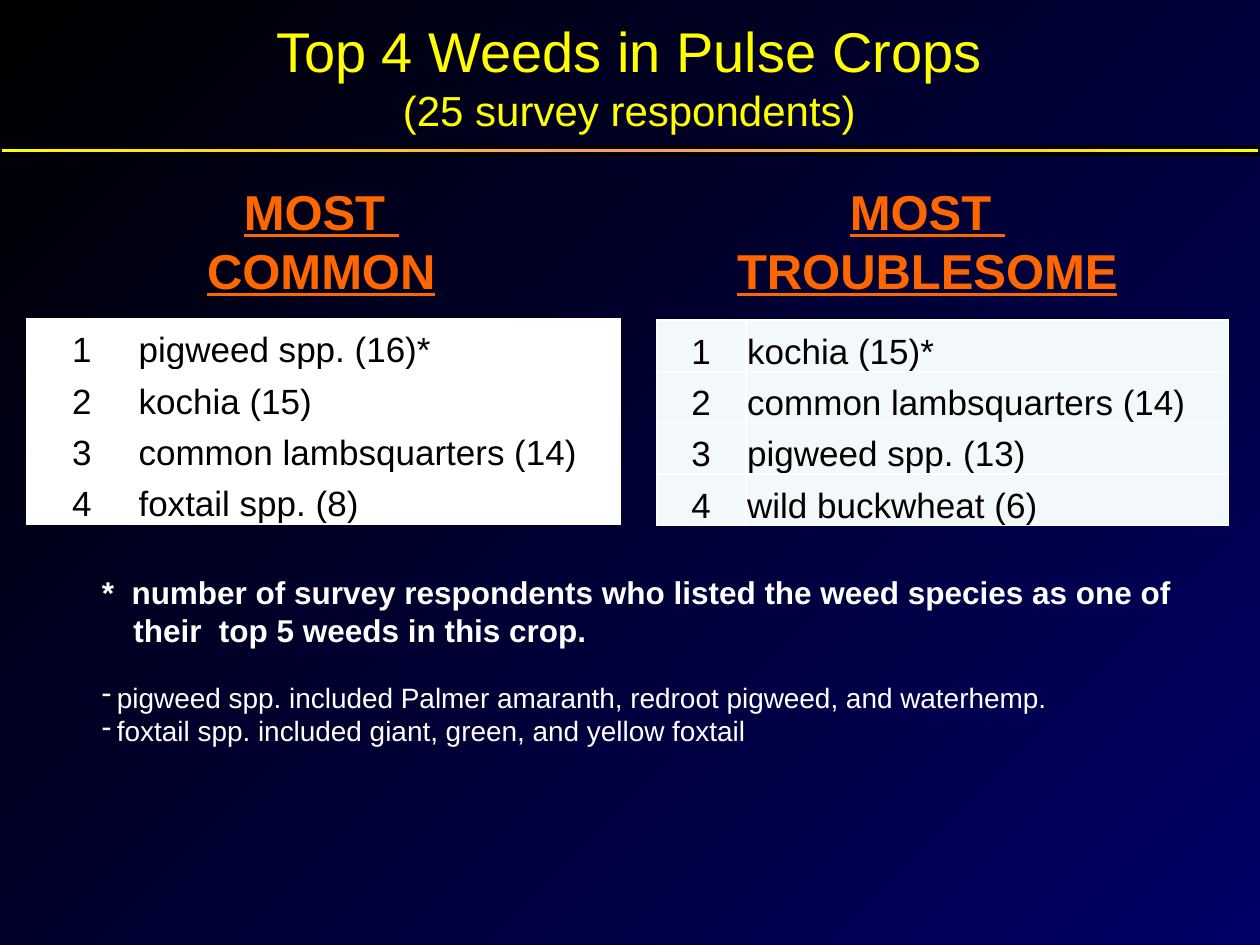
from copy import deepcopy
from dataclasses import dataclass

from lxml import etree
from pptx import Presentation
from pptx.dml.color import RGBColor
from pptx.enum.shapes import MSO_SHAPE
from pptx.enum.text import MSO_ANCHOR, PP_ALIGN
from pptx.oxml.ns import qn
from pptx.util import Inches, Pt

RECT = MSO_SHAPE.RECTANGLE
MIDDLE, BOTTOM, TOP = MSO_ANCHOR.MIDDLE, MSO_ANCHOR.BOTTOM, MSO_ANCHOR.TOP
LEFT, CENTER = PP_ALIGN.LEFT, PP_ALIGN.CENTER

BLACK = RGBColor(0x00, 0x00, 0x00)
NAVY = RGBColor(0x00, 0x00, 0x66)
WHITE = RGBColor(0xFF, 0xFF, 0xFF)
YELLOW = RGBColor(0xFF, 0xFF, 0x00)
PEACH = RGBColor(0xFF, 0x99, 0x66)
ORANGE = RGBColor(0xFF, 0x66, 0x00)
PALE = RGBColor(0xF3, 0xF9, 0xFA)

HEAD = {"size": Pt(28), "bold": True, "underline": True}
ROW_H = 1.63 / 4
NAME_W = 3.83


@dataclass
class Ranking:
    head: str
    head_x: float
    head_w: float
    wrap: bool
    x: float
    y: float
    num_w: float
    fill: RGBColor
    weeds: list[str]


RANKS = [
    Ranking("COMMON", 1.35, 2.4, True, 0.21, 2.53, 0.88, WHITE,
            ["pigweed spp. (16)*", "kochia (15)",
             "common lambsquarters (14)", "foxtail spp. (8)"]),
    Ranking("TROUBLESOME", 5.73, 3.26, False, 5.21, 2.54, 0.71, PALE,
            ["kochia (15)*", "common lambsquarters (14)",
             "pigweed spp. (13)", "wild buckwheat (6)"]),
]


def write(para, text: str, color: RGBColor, look: dict, align=LEFT) -> None:
    para.alignment = align
    run = para.add_run()
    run.text = text
    run.font.color.rgb = color
    for key, value in {"name": "Arial", **look}.items():
        setattr(run.font, key, value)


def add_box(slide, x: float, y: float, w: float, h: float, wrap: bool = True,
            anchor=TOP):
    frame = slide.shapes.add_textbox(
        Inches(x), Inches(y), Inches(w), Inches(h)).text_frame
    frame.word_wrap = wrap
    frame.vertical_anchor = anchor
    return frame


def add_lines(frame, lines: list[tuple[str, dict]], color: RGBColor,
              align=LEFT) -> None:
    """Write one paragraph per line, starting with the frame's first."""
    for i, (text, look) in enumerate(lines):
        para = frame.add_paragraph() if i else frame.paragraphs[0]
        write(para, text, color, look, align)


def hang(para, depth: float, mark: str = "") -> None:
    """Set a hanging indent, with a bullet if a mark is given."""
    props = para._p.get_or_add_pPr()
    props.set("marL", str(Inches(depth)))
    props.set("indent", str(-Inches(depth)))
    if mark:
        etree.SubElement(props, qn("a:buChar")).set("char", mark)


def shade(fill, colors: list[RGBColor]) -> None:
    for stop, color in zip(fill.gradient_stops, colors):
        stop.color.rgb = color


def edge(cell) -> None:
    """Give the cell a thin white border, ahead of its fill."""
    props = cell._tc.get_or_add_tcPr()
    for i, side in enumerate(("lnL", "lnR", "lnT", "lnB")):
        line = etree.Element(qn(f"a:{side}"), w=str(Pt(1)))
        solid = etree.SubElement(line, qn("a:solidFill"))
        etree.SubElement(solid, qn("a:srgbClr")).set("val", str(WHITE))
        props.insert(i, line)


def add_rank(slide, rank: Ranking) -> None:
    frame = add_box(slide, rank.head_x, 1.39, rank.head_w, 1.04, rank.wrap)
    add_lines(frame, [("MOST ", HEAD), (rank.head, HEAD)], ORANGE, CENTER)

    count = len(rank.weeds)
    table = slide.shapes.add_table(
        count, 2, Inches(rank.x), Inches(rank.y),
        Inches(rank.num_w + NAME_W), Inches(ROW_H * count)).table
    table.first_row = table.horz_banding = False
    for col, width in zip(table.columns, (rank.num_w, NAME_W)):
        col.width = Inches(width)
    style = {"vertical_anchor": BOTTOM, "margin_left": Inches(0.01),
             "margin_right": Inches(0.01), "margin_top": Inches(0.01),
             "margin_bottom": 0}
    for r, weed in enumerate(rank.weeds):
        for c, (text, align) in enumerate([(str(r + 1), CENTER), (weed, LEFT)]):
            cell = table.cell(r, c)
            for key, value in style.items():
                setattr(cell, key, value)
            cell.fill.solid()
            cell.fill.fore_color.rgb = rank.fill
            edge(cell)
            write(cell.text_frame.paragraphs[0], text, BLACK,
                  {"size": Pt(20)}, align)


def add_notes(slide) -> None:
    frame = add_box(slide, 0.71, 4.5, 8.71, 1.51)
    small = {"size": Pt(16), "bold": False}
    add_lines(frame, [
        ("*  number of survey respondents who listed the weed species as "
         "one of their  top 5 weeds in this crop.",
         {"size": Pt(18), "bold": True}),
        ("pigweed spp. included Palmer amaranth, redroot pigweed, "
         "and waterhemp.", small),
        ("foxtail spp. included giant, green, and yellow foxtail", small),
    ], WHITE)
    first, *rest = frame.paragraphs
    first.space_after = Pt(18)
    hang(first, 0.25)
    for para in rest:
        hang(para, 0.12, "-")


def add_rule(slide) -> None:
    bar = slide.shapes.add_shape(
        RECT, 0, Inches(1.17), Inches(10), Inches(0.05))
    bar.shadow.inherit = False
    bar.line.color.rgb = BLACK
    bar.line.width = Pt(2.25)
    bar.fill.gradient()
    bar.fill.gradient_angle = 0
    stops = bar.element.spPr.find(".//" + qn("a:gsLst"))
    stops.insert(1, deepcopy(stops[0]))
    bar.fill.gradient_stops[1].position = 0.5
    shade(bar.fill, [YELLOW, PEACH, YELLOW])


def main() -> None:
    deck = Presentation()
    deck.slide_width, deck.slide_height = Inches(10), Inches(7.5)
    slide = deck.slides.add_slide(deck.slide_layouts[6])
    back = slide.background.fill
    back.gradient()
    back.gradient_angle = 315
    shade(back, [BLACK, NAVY])

    title = add_box(slide, 0.33, 0, 9.33, 1.2, anchor=MIDDLE)
    add_lines(title, [("Top 4 Weeds in Pulse Crops", {"size": Pt(32)}),
                      ("(25 survey respondents)", {"size": Pt(24)})],
              YELLOW, CENTER)
    for rank in RANKS:
        add_rank(slide, rank)
    add_notes(slide)
    add_rule(slide)
    deck.save("out.pptx")


if __name__ == "__main__":
    main()
